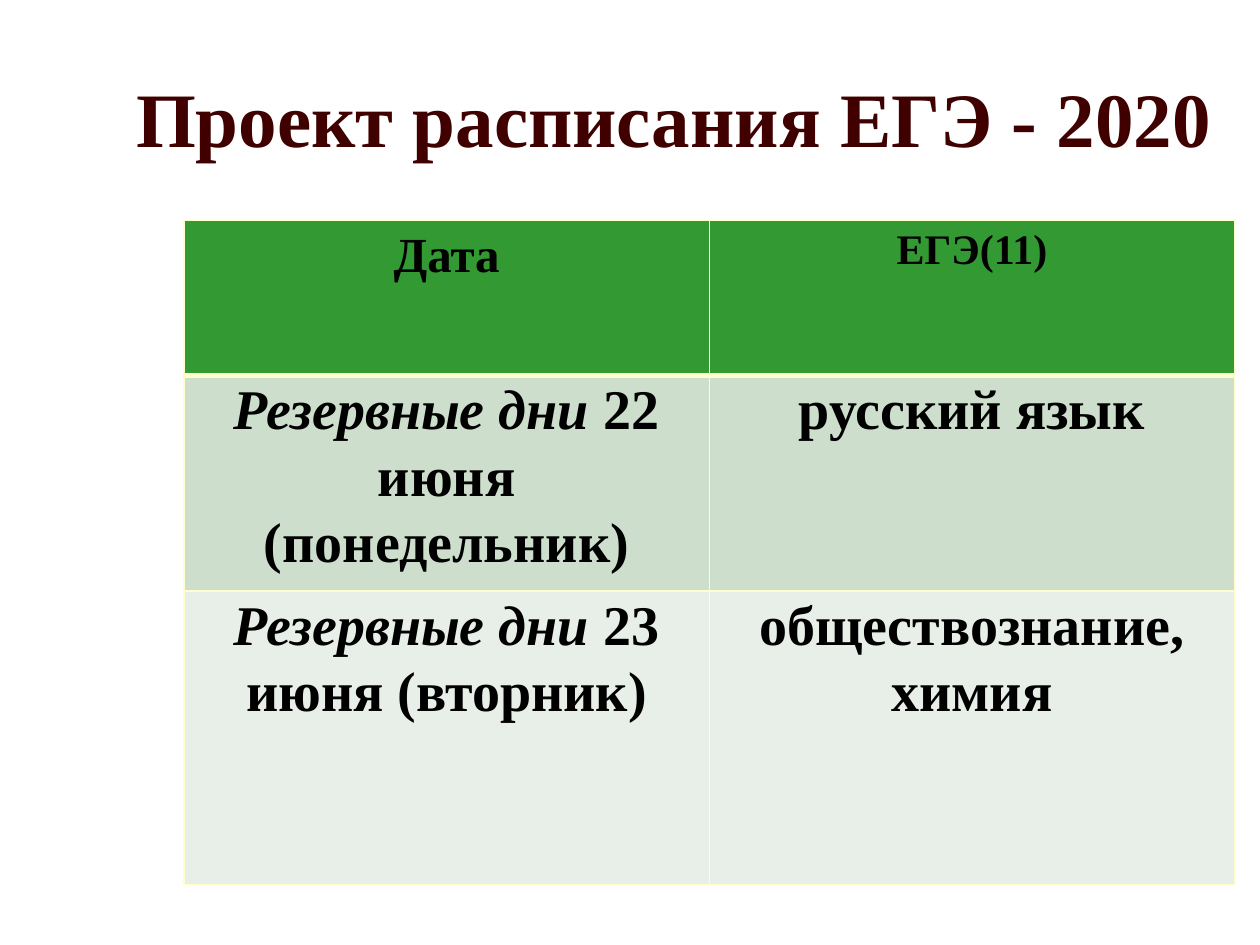
import pptx
import pptx.dml.color
import pptx.enum.text
import pptx.oxml
import pptx.util
from pptx.util import Inches

TITLE = "Проект расписания ЕГЭ - 2020"
FONT = "Times New Roman"
BORDER = "FFFFCC"
COLUMN_WIDTHS = [4.17, 4.17]
ROWS = [
    {"height": 1.23, "fill": "339933", "spacing": 1.15, "top": 1, "bottom": 3,
     "cells": [[("Дата", 28, False)], [("ЕГЭ(11)", 24, False)]]},
    {"height": 1.71, "fill": "CDDECD", "spacing": 1.07, "top": 3, "bottom": 1,
     "cells": [[("Резервные дни", 32, True), (" 22 июня (понедельник)", 32, False)],
               [("русский язык", 32, False)]]},
    {"height": 2.33, "fill": "E8EFE8", "spacing": 1.07, "top": 1, "bottom": 1,
     "cells": [[("Резервные дни", 32, True), (" 23 июня (вторник)", 32, False)],
               [("обществознание, химия", 32, False)]]},
]


def color(value):
    return pptx.dml.color.RGBColor.from_string(value)


def add_text(paragraph, text, size, fill="000000", italic=False):
    run = paragraph.add_run()
    run.text = text
    font = run.font
    font.name, font.size = FONT, pptx.util.Pt(size)
    font.bold, font.italic = True, italic
    font.color.rgb = color(fill)


def set_borders(cell, **widths):
    properties = cell._tc.get_or_add_tcPr()
    for position, (side, width) in enumerate(widths.items()):
        line = pptx.oxml.parse_xml(
            f'<a:ln{side} xmlns:a="http://schemas.openxmlformats.org/drawingml/2006/main" '
            f'w="{pptx.util.Pt(width)}"><a:solidFill><a:srgbClr val="{BORDER}"/>'
            f'</a:solidFill></a:ln{side}>')
        properties.insert(position, line)


def add_title(slide):
    title = slide.shapes.title
    title.left, title.top = Inches(0.27), Inches(0.31)
    title.width, title.height = Inches(9.45), Inches(1.24)
    title.fill.solid()
    title.fill.fore_color.rgb = color("FFFFFF")
    title.line.color.rgb = color("FFFFFF")
    title.line.width = pptx.util.Pt(1.5)
    frame = title.text_frame
    frame.word_wrap = True
    frame.auto_size = pptx.enum.text.MSO_AUTO_SIZE.NONE
    frame.vertical_anchor = pptx.enum.text.MSO_ANCHOR.MIDDLE
    paragraph = frame.paragraphs[0]
    paragraph.alignment = pptx.enum.text.PP_ALIGN.RIGHT
    add_text(paragraph, TITLE, 44, fill="400000")


def fill_cell(cell, runs, row):
    cell.margin_left = cell.margin_right = Inches(0.07)
    cell.margin_top = cell.margin_bottom = 0
    cell.fill.solid()
    cell.fill.fore_color.rgb = color(row["fill"])
    set_borders(cell, L=1, R=1, T=row["top"], B=row["bottom"])
    paragraph = cell.text_frame.paragraphs[0]
    paragraph.alignment = pptx.enum.text.PP_ALIGN.CENTER
    paragraph.line_spacing = row["spacing"]
    for text, size, italic in runs:
        add_text(paragraph, text, size, italic=italic)


def add_schedule(slide):
    table = slide.shapes.add_table(
        len(ROWS), len(COLUMN_WIDTHS), Inches(1.46), Inches(1.75),
        Inches(sum(COLUMN_WIDTHS)), Inches(sum(row["height"] for row in ROWS))).table
    for column, width in zip(table.columns, COLUMN_WIDTHS):
        column.width = Inches(width)
    for table_row, row in zip(table.rows, ROWS):
        table_row.height = Inches(row["height"])
        for cell, runs in zip(table_row.cells, row["cells"]):
            fill_cell(cell, runs, row)


def main():
    """Build the exam schedule slide."""
    presentation = pptx.Presentation()
    presentation.slide_width, presentation.slide_height = Inches(10), Inches(7.5)
    slide = presentation.slides.add_slide(presentation.slide_layouts[5])
    add_title(slide)
    add_schedule(slide)
    presentation.save("out.pptx")


if __name__ == "__main__":
    main()
